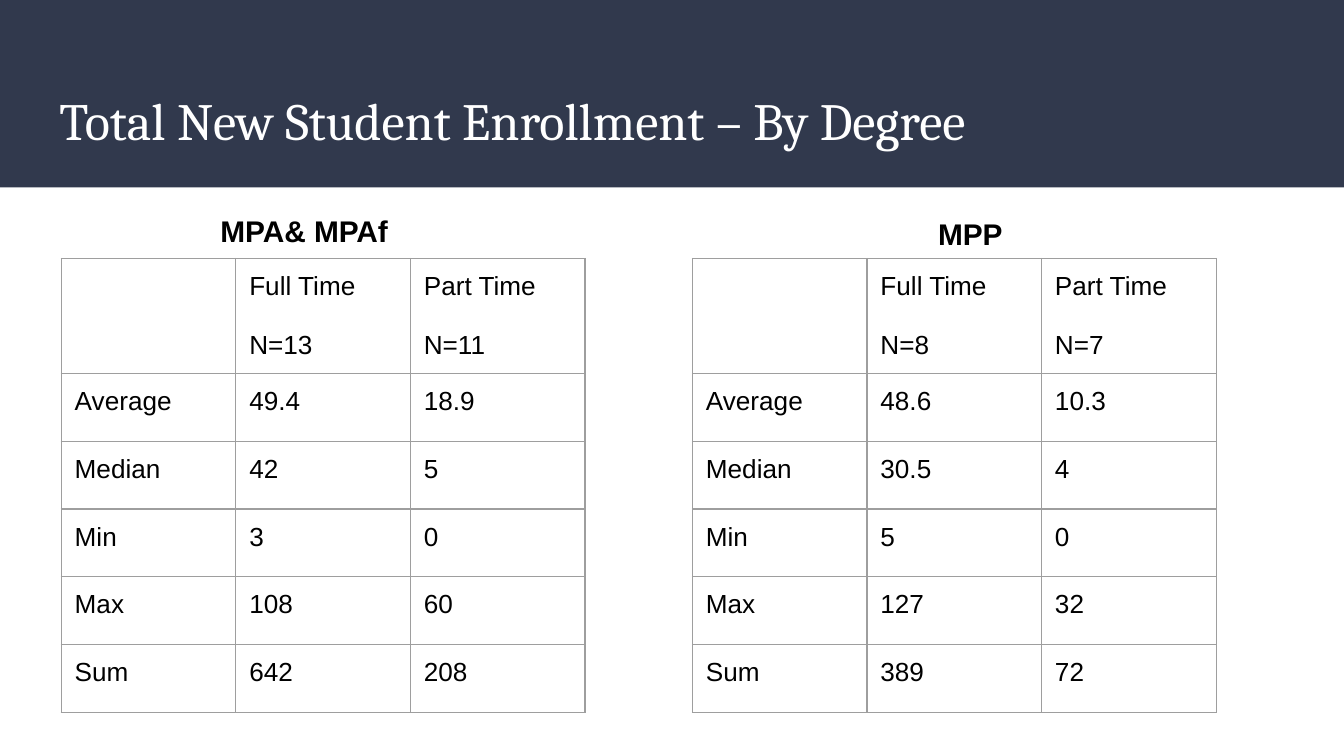
from dataclasses import dataclass

from lxml.etree import SubElement
from pptx import Presentation
from pptx.dml.color import RGBColor
from pptx.enum.shapes import MSO_SHAPE
from pptx.enum.text import MSO_ANCHOR, PP_ALIGN
from pptx.oxml.ns import qn
from pptx.util import Inches, Pt

# Widescreen slide with a grid of 100 columns by 100 rows
SLIDE_WIDTH = Inches(10)
SLIDE_HEIGHT = SLIDE_WIDTH * 9 // 16
NAVY, WHITE, BLACK, GREY = "31394D", "FFFFFF", "000000", "9E9E9E"
CELL_COLUMNS = 12.99
HEADER_ROWS, BODY_ROWS = 15.2, 8.97
TABLE_TOP = 34.2
MEASURES = ("Average", "Median", "Min", "Max", "Sum")


@dataclass(frozen=True)
class Area:
    left: float
    top: float
    width: float
    height: float

    def box(self) -> tuple[int, int, int, int]:
        return (columns(self.left), rows(self.top),
                columns(self.width), rows(self.height))


@dataclass(frozen=True)
class Cohort:
    label: str
    count: int
    values: tuple[str, ...]


@dataclass(frozen=True)
class Degree:
    name: str
    name_area: Area
    table_left: float
    cohorts: tuple[Cohort, ...]


def columns(count: float) -> int:
    return round(SLIDE_WIDTH * count / 100)


def rows(count: float) -> int:
    return round(SLIDE_HEIGHT * count / 100)


def color(hex_value: str) -> RGBColor:
    return RGBColor.from_string(hex_value)


def add_run(paragraph, text: str, size: float, font: str = "Arial",
            ink: str = BLACK, bold: bool = False) -> None:
    run = paragraph.add_run()
    run.text = text
    run.font.name, run.font.size, run.font.bold = font, Pt(size), bold
    run.font.color.rgb = color(ink)


def add_text_frame(slide, area: Area, inset: float, anchor: MSO_ANCHOR):
    frame = slide.shapes.add_textbox(*area.box()).text_frame
    frame.word_wrap = True
    frame.vertical_anchor = anchor
    frame.margin_left = frame.margin_right = Inches(0.1)
    frame.margin_top = frame.margin_bottom = Inches(inset)
    return frame


def add_title_band(slide, title: str) -> None:
    band = slide.shapes.add_shape(MSO_SHAPE.RECTANGLE, *Area(0, 0, 100, 24.8).box())
    band.shadow.inherit = False
    band.fill.solid()
    band.fill.fore_color.rgb = color(NAVY)
    band.line.fill.background()
    frame = add_text_frame(slide, Area(3.44, 9.7, 93.2, 12.1), 0.1, MSO_ANCHOR.MIDDLE)
    add_run(frame.paragraphs[0], title, 28, "Cambria", WHITE)


def add_borders(cell) -> None:
    properties = cell._tc.get_or_add_tcPr()
    for position, side in enumerate(("a:lnL", "a:lnR", "a:lnT", "a:lnB")):
        line = SubElement(properties, qn(side), w=str(Pt(0.75)))
        fill = SubElement(line, qn("a:solidFill"))
        SubElement(fill, qn("a:srgbClr"), val=GREY)
        properties.insert(position, line)  # borders precede the cell fill


def fill_cell(cell, lines: tuple[str, ...]) -> None:
    cell.fill.background()
    cell.margin_left = cell.margin_right = cell.margin_top = Inches(0.1)
    cell.margin_bottom = Inches(0.06)
    add_borders(cell)
    frame = cell.text_frame
    for index, line in enumerate(lines):
        paragraph = frame.add_paragraph() if index else frame.paragraphs[0]
        if index:
            paragraph.space_before = Pt(16)
        add_run(paragraph, line, 14)


def add_degree(slide, degree: Degree) -> None:
    # Header row, then one row per measure
    header = [(), *((c.label, f"N={c.count}") for c in degree.cohorts)]
    body = [[(measure,), *((c.values[index],) for c in degree.cohorts)]
            for index, measure in enumerate(MEASURES)]
    grid = [header, *body]
    area = Area(degree.table_left, TABLE_TOP, CELL_COLUMNS * len(header),
                HEADER_ROWS + BODY_ROWS * len(body))
    table = slide.shapes.add_table(len(grid), len(header), *area.box()).table
    table.first_row = table.horz_banding = False
    for column in table.columns:
        column.width = columns(CELL_COLUMNS)
    for row_index, row in enumerate(grid):
        table.rows[row_index].height = rows(BODY_ROWS if row_index else HEADER_ROWS)
        for column_index, lines in enumerate(row):
            fill_cell(table.cell(row_index, column_index), lines)

    # Degree name above the table
    name = add_text_frame(slide, degree.name_area, 0.05, MSO_ANCHOR.TOP).paragraphs[0]
    name.alignment = PP_ALIGN.CENTER
    add_run(name, degree.name, 16, bold=True)


DEGREES = (
    Degree("MPA& MPAf", Area(9.84, 27.3, 25.6, 6.6), 4.56, (
        Cohort("Full Time", 13, ("49.4", "42", "3", "108", "642")),
        Cohort("Part Time", 11, ("18.9", "5", "0", "60", "208")))),
    Degree("MPP", Area(59.4, 27.7, 25.6, 6.6), 51.52, (
        Cohort("Full Time", 8, ("48.6", "30.5", "5", "127", "389")),
        Cohort("Part Time", 7, ("10.3", "4", "0", "32", "72")))),
)


def main() -> None:
    presentation = Presentation()
    presentation.slide_width, presentation.slide_height = SLIDE_WIDTH, SLIDE_HEIGHT
    slide = presentation.slides.add_slide(presentation.slide_layouts[6])
    add_title_band(slide, "Total New Student Enrollment – By Degree")
    for degree in DEGREES:
        add_degree(slide, degree)
    presentation.save("out.pptx")


if __name__ == "__main__":
    main()
